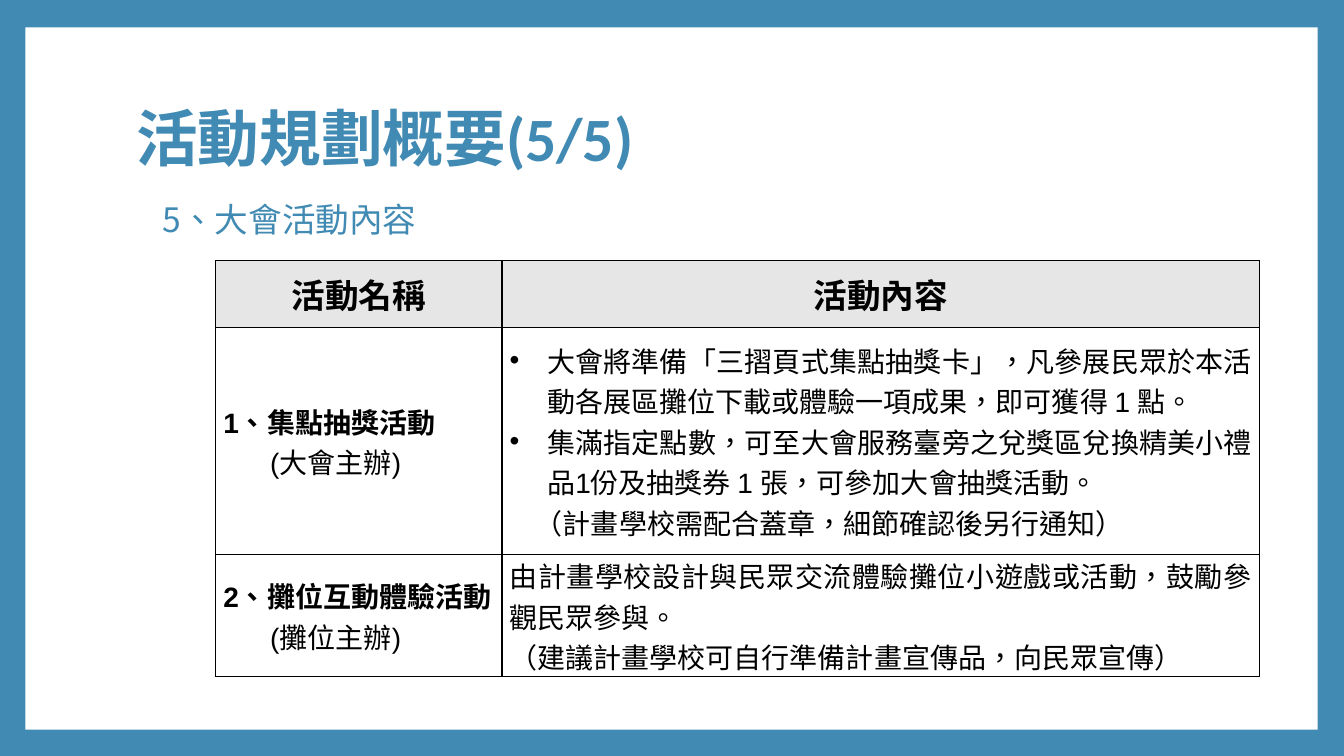
from dataclasses import dataclass

from lxml import etree
from pptx import Presentation
from pptx import util as u
from pptx.dml.color import RGBColor
from pptx.enum import shapes, text
from pptx.oxml.ns import qn


@dataclass(frozen=True)
class Theme:
    blue: RGBColor = RGBColor(0x41, 0x8A, 0xB3)
    white: RGBColor = RGBColor(0xFF, 0xFF, 0xFF)
    black: RGBColor = RGBColor(0, 0, 0)
    gray: RGBColor = RGBColor(0xE7, 0xE6, 0xE6)
    cjk: str = "Noto Sans CJK SC"
    heading: str = "Calibri"
    body: str = "Arial"
    title_size: int = 44
    head_size: int = 24
    cell_size: int = 20


T = Theme()
ALIGN = text.PP_ALIGN


def add_run(p, words, size, font, color, bold=False):
    r = p.add_run()
    r.text = words
    f = r.font
    f.size, f.name, f.bold = u.Pt(size), font, bold
    f.color.rgb = color
    rpr = r._r.get_or_add_rPr()
    rpr.set("lang", "zh-TW")
    ea = etree.Element(qn("a:ea"), typeface=T.cjk)
    rpr.find(qn("a:latin")).addnext(ea)


def indent(p, left, bullet=False):
    """Indent a paragraph; a bullet hangs by the same length."""
    ppr = p._p.get_or_add_pPr()
    ppr.set("marL", str(u.Cm(left)))
    if bullet:
        ppr.set("indent", str(-u.Cm(left)))
        etree.SubElement(ppr, qn("a:buFont"), typeface="Arial")
        etree.SubElement(ppr, qn("a:buChar"), char="•")


def draw_border(cell):
    tcpr = cell._tc.get_or_add_tcPr()
    for i, side in enumerate(("lnL", "lnR", "lnT", "lnB")):
        ln = etree.Element(qn("a:" + side), w=str(u.Pt(1)))
        fill = etree.SubElement(ln, qn("a:solidFill"))
        etree.SubElement(fill, qn("a:srgbClr"), val=str(T.black))
        tcpr.insert(i, ln)


def fill_cell(cell, lines, size, fill=None):
    """Each line is (words, bold, alignment, indent, bullet)."""
    cell.margin_left = cell.margin_right = u.Cm(0.19)
    cell.margin_top = cell.margin_bottom = 0
    cell.vertical_anchor = text.MSO_ANCHOR.MIDDLE
    if fill is None:
        cell.fill.background()
    else:
        cell.fill.solid()
        cell.fill.fore_color.rgb = fill
    draw_border(cell)
    tf = cell.text_frame
    for i, (words, bold, align, left, bullet) in enumerate(lines):
        p = tf.add_paragraph() if i else tf.paragraphs[0]
        p.alignment = align
        if left:
            indent(p, left, bullet)
        add_run(p, words, size, T.body, T.black, bold)


# Blue frame around a white panel, kept on the slide's layout
def add_frame(s, box):
    layout = s.slide_layout
    layout.background.fill.solid()
    layout.background.fill.fore_color.rgb = T.blue
    panel = s.shapes.add_shape(shapes.MSO_SHAPE.RECTANGLE, *map(u.Cm, box))
    panel.shadow.inherit = False
    panel.fill.solid()
    panel.fill.fore_color.rgb = T.white
    panel.line.fill.background()
    panel._element.nvSpPr.cNvPr.set("id", "20")
    layout.placeholders[0]._element.addprevious(panel._element)


# Slide title
def add_title(s, box, words):
    sp = s.shapes.title
    sp.left, sp.top, sp.width, sp.height = map(u.Cm, box)
    tf = sp.text_frame
    tf.auto_size = text.MSO_AUTO_SIZE.NONE
    tf.vertical_anchor = text.MSO_ANCHOR.MIDDLE
    p = tf.paragraphs[0]
    p.alignment, p.line_spacing = ALIGN.LEFT, 0.9
    add_run(p, words, T.title_size, T.heading, T.blue, True)


# Section heading under the title
def add_subtitle(s, box, words):
    sp = s.shapes.add_textbox(*map(u.Cm, box))
    tf = sp.text_frame
    tf.word_wrap = True
    p = tf.paragraphs[0]
    p.line_spacing, p.space_before = 0.9, u.Pt(14)
    add_run(p, words, T.head_size, T.cjk, T.blue)


# Activity table: heading row, then name and content of each activity
def add_activities(s, box, name_width, heights, heads, activities):
    table = s.shapes.add_table(len(heights), 2, *map(u.Cm, box)).table
    table.horz_banding = False
    table.columns[0].width = u.Cm(name_width)
    table.columns[1].width = u.Cm(box[2] - name_width)
    for row, height in zip(table.rows, heights):
        row.height = u.Cm(height)
    for col, head in enumerate(heads):
        fill_cell(table.cell(0, col), [(head, True, ALIGN.CENTER, 0, False)],
                  T.head_size, T.gray)
    for row, (name, host, content) in enumerate(activities, 1):
        fill_cell(table.cell(row, 0),
                  [(name, True, ALIGN.LEFT, 0, False),
                   (host, False, ALIGN.LEFT, 1.18, False)], T.cell_size)
        fill_cell(table.cell(row, 1),
                  [(words, False, ALIGN.JUSTIFY, left, bullet)
                   for words, left, bullet in content], T.cell_size)


def main():
    prs = Presentation()
    prs.slide_width, prs.slide_height = u.Cm(33.87), u.Cm(19.05)
    s = prs.slides.add_slide(prs.slide_layouts[5])
    add_frame(s, (0.64, 0.69, 32.57, 17.7))
    add_title(s, (3.18, 1.69, 27.43, 3.76), "活動規劃概要(5/5)")
    activities = [
        ("1、集點抽獎活動", "(大會主辦)", [
            ("大會將準備「三摺頁式集點抽獎卡」，凡參展民眾於本活動各展區攤位"
             "下載或體驗一項成果，即可獲得 1 點。", 0.95, True),
            ("集滿指定點數，可至大會服務臺旁之兌獎區兌換精美小禮品1份及抽獎券"
             " 1 張，可參加大會抽獎活動。", 0.95, True),
            ("（計畫學校需配合蓋章，細節確認後另行通知）", 0.64, False)]),
        ("2、攤位互動體驗活動", "(攤位主辦)", [
            ("由計畫學校設計與民眾交流體驗攤位小遊戲或活動，鼓勵參觀民眾參與。",
             0, False),
            ("（建議計畫學校可自行準備計畫宣傳品，向民眾宣傳）", 0, False)]),
    ]
    add_activities(s, (5.44, 6.57, 26.3, 10.49), 7.21, (1.68, 5.73, 3.07),
                   ("活動名稱", "活動內容"), activities)
    add_subtitle(s, (3.85, 5, 21.9, 1.55), "5、大會活動內容")
    prs.save("out.pptx")


if __name__ == "__main__":
    main()
